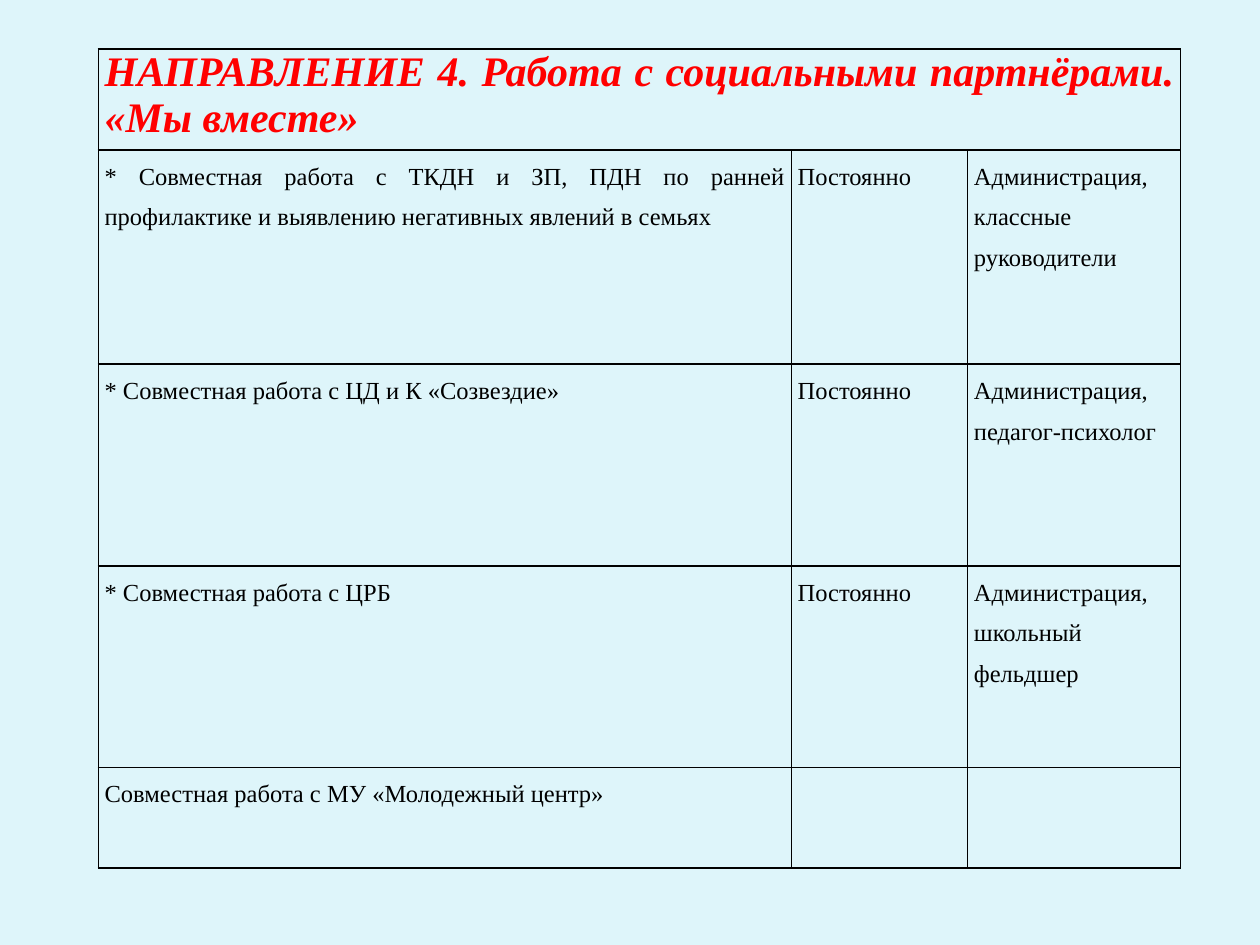
"""Build a slide with a table of activities with social partners."""
from lxml.etree import SubElement
from pptx import Presentation
from pptx.dml.color import RGBColor
from pptx.enum.text import PP_ALIGN
from pptx.oxml.ns import qn
from pptx.util import Inches, Pt

COLORS = {"background": "DEF5FA", "heading": "FF0000", "text": "000000", "border": "000000"}
FONT = "Times New Roman"
COLUMN_WIDTHS = [5.5, 1.4, 1.69]
ROW_HEIGHTS = [0.8, 1.7, 1.6, 1.6, 0.8]
ROWS = [
    ["НАПРАВЛЕНИЕ 4. Работа с социальными партнёрами. «Мы вместе»", "", ""],
    ["* Совместная работа с ТКДН и ЗП, ПДН по ранней профилактике и выявлению негативных явлений в семьях",
     "Постоянно", "Администрация, классные руководители"],
    ["* Совместная работа с ЦД и К «Созвездие»", "Постоянно", "Администрация, педагог-психолог"],
    ["* Совместная работа с ЦРБ", "Постоянно", "Администрация, школьный фельдшер"],
    ["Совместная работа с МУ «Молодежный центр»", "", ""],
]


def add_borders(cell):
    properties = cell._tc.get_or_add_tcPr()
    for side in ("a:lnL", "a:lnR", "a:lnT", "a:lnB"):
        line = SubElement(properties, qn(side), w=str(Pt(1)))
        fill = SubElement(line, qn("a:solidFill"))
        SubElement(fill, qn("a:srgbClr"), val=COLORS["border"])


def add_text(cell, text, is_heading):
    para = cell.text_frame.paragraphs[0]
    para.alignment = PP_ALIGN.JUSTIFY
    para.line_spacing = 1.0 if is_heading else 1.5
    span = para.add_run()
    span.text = text
    span.font.name = FONT
    span.font.size = Pt(24 if is_heading else 14)
    span.font.bold = span.font.italic = is_heading
    span.font.color.rgb = RGBColor.from_string(COLORS["heading" if is_heading else "text"])


deck = Presentation()
deck.slide_width, deck.slide_height = Inches(10), Inches(7.5)
page = deck.slides.add_slide(deck.slide_layouts[6])
page.background.fill.solid()
page.background.fill.fore_color.rgb = RGBColor.from_string(COLORS["background"])

table = page.shapes.add_table(
    len(ROWS), len(COLUMN_WIDTHS), Inches(0.78), Inches(0.39),
    Inches(sum(COLUMN_WIDTHS)), Inches(sum(ROW_HEIGHTS))).table
table.first_row = table.horz_banding = False
for column, width in zip(table.columns, COLUMN_WIDTHS):
    column.width = Inches(width)
for row, height in zip(table.rows, ROW_HEIGHTS):
    row.height = Inches(height)
table.cell(0, 0).merge(table.cell(0, len(COLUMN_WIDTHS) - 1))

for row_index, texts in enumerate(ROWS):
    for column_index, text in enumerate(texts):
        cell = table.cell(row_index, column_index)
        cell.margin_left = cell.margin_right = Inches(0.05)
        cell.margin_top = cell.margin_bottom = Inches(0)
        add_borders(cell)
        cell.fill.background()
        if text:
            add_text(cell, text, row_index == 0)

deck.save("out.pptx")
